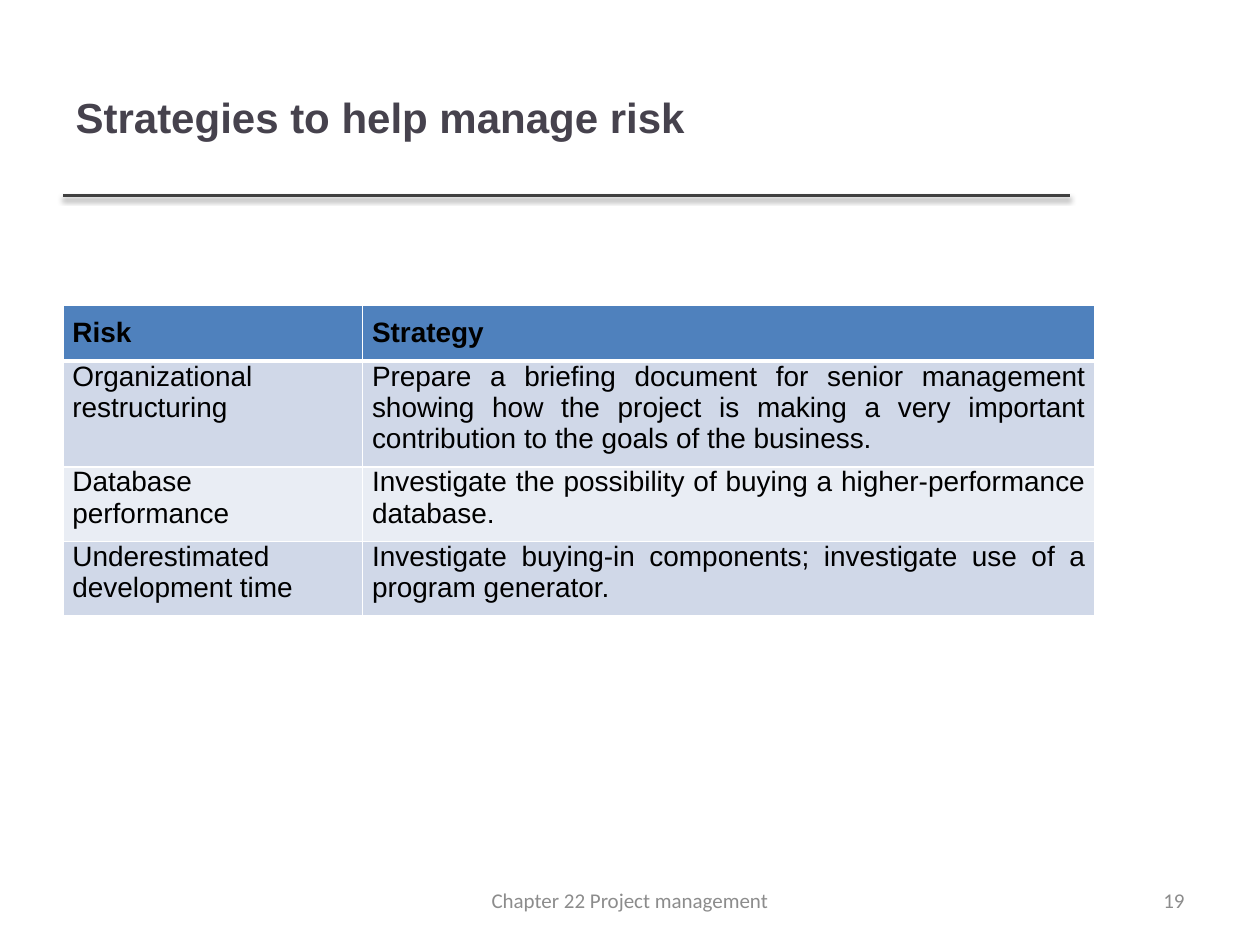
from lxml import etree
from pptx import Presentation
from pptx.dml.color import RGBColor
from pptx.enum import shapes, text
from pptx.oxml import parse_xml
from pptx.oxml.ns import nsdecls, qn
from pptx.util import Cm, Pt

WHITE = RGBColor(0xFF, 0xFF, 0xFF)
BLACK = RGBColor(0, 0, 0)
TITLE_COLOR = RGBColor(0x46, 0x42, 0x4D)
RULE_COLOR = RGBColor(0x40, 0x40, 0x40)
FOOTER_COLOR = RGBColor(0x8C, 0x8C, 0x8C)
HEADER_FILL = RGBColor(0x4F, 0x81, 0xBD)
BAND_FILLS = (RGBColor(0xE9, 0xED, 0xF4), RGBColor(0xD0, 0xD8, 0xE8))

LEFT = Cm(1.27)
ROWS = (
    ("Risk", "Strategy"),
    ("Organizational restructuring",
     "Prepare a briefing document for senior management showing how the project "
     "is making a very important contribution to the goals of the business."),
    ("Database performance",
     "Investigate the possibility of buying a higher-performance database."),
    ("Underestimated development time",
     "Investigate buying-in components; investigate use of a program generator."),
)


def style(paragraph, name, size, color, align, bold=False):
    paragraph.alignment = align
    font = paragraph.font
    font.name, font.size, font.bold = name, Pt(size), bold
    font.color.rgb = color


def set_title(slide, wording):
    title = slide.shapes.title
    title.left, title.top, title.width, title.height = LEFT, Cm(0.76), Cm(20.27), Cm(3.18)
    frame = title.text_frame
    frame.text = wording
    frame.vertical_anchor = text.MSO_ANCHOR.MIDDLE
    style(frame.paragraphs[0], "Arial", 24, TITLE_COLOR, text.PP_ALIGN.LEFT, True)


def add_rule(slide):
    """Draw the line under the title with its soft shadow."""
    top = Cm(3.94)
    rule = slide.shapes.add_connector(
        shapes.MSO_CONNECTOR.STRAIGHT, LEFT, top, Cm(21.56), top)
    rule.line.color.rgb = RULE_COLOR
    rule.line.width = Pt(2)
    rule._element.spPr.append(parse_xml(
        f'<a:effectLst {nsdecls("a")}><a:outerShdw blurRad="40000" dist="20000" '
        'dir="5400000" rotWithShape="0"><a:srgbClr val="000000">'
        '<a:alpha val="38000"/></a:srgbClr></a:outerShdw></a:effectLst>'))


def set_borders(cell, widths):
    """Give the cell white borders; widths maps each side (L, R, T, B) to points."""
    properties = cell._tc.get_or_add_tcPr()
    for index, (side, width) in enumerate(widths.items()):
        border = etree.Element(qn(f"a:ln{side}"), w=str(Pt(width)))
        fill = etree.SubElement(border, qn("a:solidFill"))
        etree.SubElement(fill, qn("a:srgbClr"), val=str(WHITE))
        properties.insert(index, border)


def fill_cell(cell, wording, row, column):
    header = row == 0
    cell.text = wording
    cell.margin_left = cell.margin_right = Cm(0.19)
    cell.margin_top = Cm(0.25 if header else 0)
    cell.margin_bottom = Cm(0.25)
    cell.fill.solid()
    cell.fill.fore_color.rgb = HEADER_FILL if header else BAND_FILLS[row % 2]
    justified = header or column == 1
    align = text.PP_ALIGN.JUSTIFY if justified else text.PP_ALIGN.LEFT
    style(cell.text_frame.paragraphs[0], "Arial", 16, BLACK, align, header)
    set_borders(cell, {"L": 1, "R": 1, "T": 3 if row == 1 else 1, "B": 3 if header else 1})


def add_risk_table(slide):
    widths = Cm(6.04), Cm(14.76)
    table = slide.shapes.add_table(
        len(ROWS), len(widths), LEFT, Cm(6.15), sum(widths), Cm(1.04) * len(ROWS)).table
    for column, width in zip(table.columns, widths):
        column.width = width
    for row, wordings in enumerate(ROWS):
        for column, wording in enumerate(wordings):
            fill_cell(table.cell(row, column), wording, row, column)


def add_footer(slide, wording, left, width, align):
    box = slide.shapes.add_textbox(left, Cm(17.65), width, Cm(1.01))
    frame = box.text_frame
    frame.word_wrap = True
    frame.vertical_anchor = text.MSO_ANCHOR.MIDDLE
    frame.text = wording
    style(frame.paragraphs[0], "Calibri", 12, FOOTER_COLOR, align)


def main():
    deck = Presentation()
    deck.slide_width, deck.slide_height = Cm(25.4), Cm(19.05)
    slide = deck.slides.add_slide(deck.slide_layouts.get_by_name("Title Only"))
    add_rule(slide)
    set_title(slide, "Strategies to help manage risk")
    add_risk_table(slide)
    add_footer(slide, "19", Cm(18.2), Cm(5.93), text.PP_ALIGN.RIGHT)
    add_footer(slide, "Chapter 22 Project management", Cm(8.68), Cm(8.04),
               text.PP_ALIGN.CENTER)
    deck.save("out.pptx")


if __name__ == "__main__":
    main()
